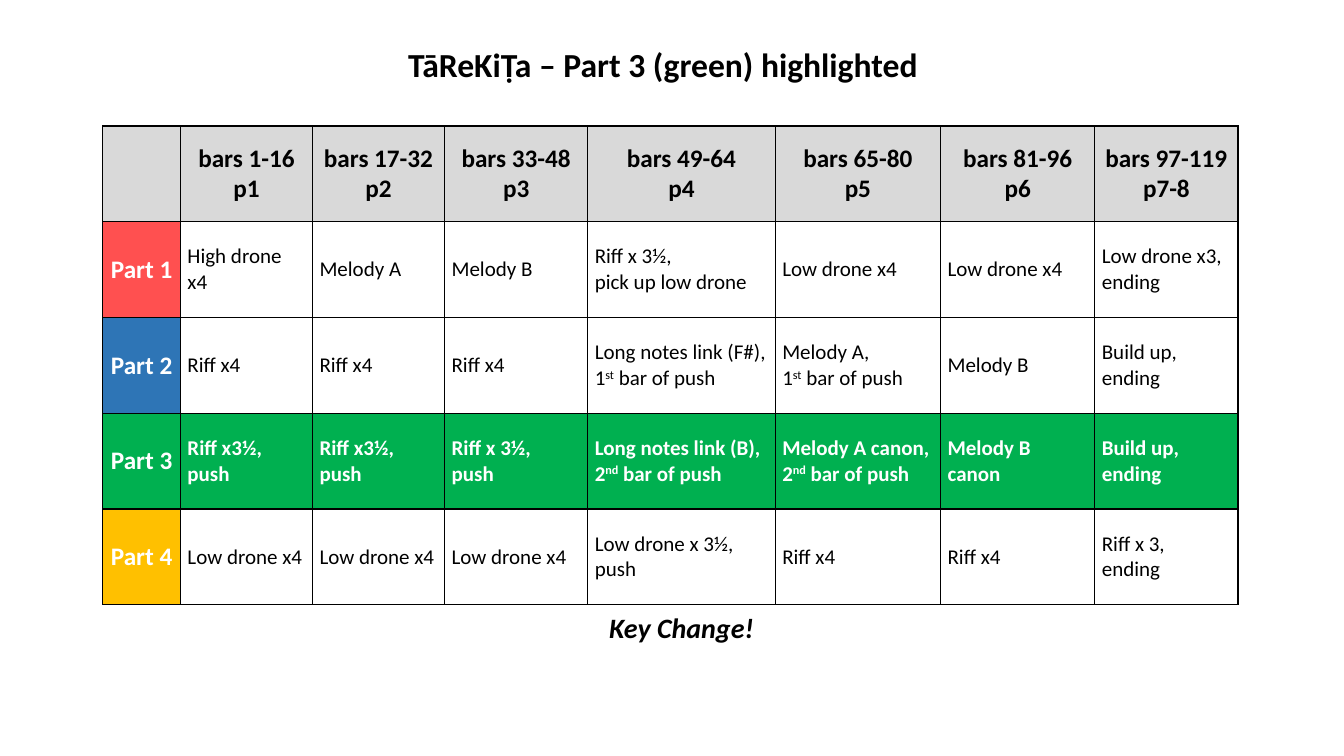
from pptx import Presentation
from pptx.dml.color import RGBColor
from pptx.enum.text import MSO_ANCHOR, PP_ALIGN
from pptx.oxml import parse_xml
from pptx.oxml.ns import nsdecls, qn
from pptx.util import Inches, Pt

CENTER, LEFT = PP_ALIGN.CENTER, PP_ALIGN.LEFT
MIDDLE = MSO_ANCHOR.MIDDLE

BLACK = RGBColor(0x00, 0x00, 0x00)
WHITE = RGBColor(0xFF, 0xFF, 0xFF)
GREY = RGBColor(0xD9, 0xD9, 0xD9)
RED = RGBColor(0xFF, 0x50, 0x50)
BLUE = RGBColor(0x2E, 0x75, 0xB6)
GREEN = RGBColor(0x00, 0xB0, 0x50)
AMBER = RGBColor(0xFF, 0xC0, 0x00)

FONT = "Calibri"
PLAIN_STYLE = "{2D5ABB26-0587-4C30-8999-92F81FD0307C}"

# "\n" starts a new paragraph; text between carets is superscript.
TITLE = "TāReKiṬa – Part 3 (green) highlighted"
HEADER = ["", "bars 1-16\np1", "bars 17-32\np2", "bars 33-48\np3", "bars 49-64\np4",
          "bars 65-80\np5", "bars 81-96\np6", "bars 97-119\np7-8"]
PARTS = [
    ["Part 1", "High drone x4", "Melody A", "Melody B", "Riff x 3½,\npick up low drone",
     "Low drone x4", "Low drone x4", "Low drone x3, ending"],
    ["Part 2", "Riff x4", "Riff x4", "Riff x4", "Long notes link (F#), 1^st^ bar of push",
     "Melody A,\n1^st^ bar of push", "Melody B", "Build up, ending"],
    ["Part 3", "Riff x3½, push", "Riff x3½, push", "Riff x 3½,\npush",
     "Long notes link (B), 2^nd^ bar of push", "Melody A canon, 2^nd^ bar of push",
     "Melody B canon", "Build up, ending"],
    ["Part 4", "Low drone x4", "Low drone x4", "Low drone x4", "Low drone x 3½, push",
     "Riff x4", "Riff x4", "Riff x 3,\nending"],
]
PART_COLORS = [RED, BLUE, GREEN, AMBER]
HIGHLIGHTED = 2
FOOTNOTE, FOOTNOTE_COL = "Key Change!", 4

COL_WIDTHS = [0.77, 1.31, 1.31, 1.42, 1.86, 1.64, 1.53, 1.42]
ROW_HEIGHT, FOOT_HEIGHT = 0.95, 0.48


def write(tf, text, size, color=BLACK, bold=False, italic=False, align=LEFT):
    for i, line in enumerate(text.split("\n")):
        p = tf.paragraphs[0] if i == 0 else tf.add_paragraph()
        p.alignment = align
        font = p.font
        font.name, font.size, font.bold, font.italic = FONT, Pt(size), bold, italic
        font.color.rgb = color
        for j, piece in enumerate(line.split("^")):
            r = p.add_run()
            r.text = piece
            if j % 2:
                r.font._element.set("baseline", "30000")


def add_borders(cell):
    tc_pr = cell._tc.get_or_add_tcPr()
    for side in ("lnL", "lnR", "lnT", "lnB"):
        tc_pr.append(parse_xml(
            f'<a:{side} {nsdecls("a")} w="{Pt(1)}"><a:solidFill>'
            f'<a:srgbClr val="{BLACK}"/></a:solidFill></a:{side}>'))


def fill_cell(cell, text, size, fill=None, **style):
    cell.margin_left = cell.margin_right = Inches(0.07)
    cell.margin_top = cell.margin_bottom = 0
    cell.vertical_anchor = MIDDLE
    if fill is not None:
        cell.fill.solid()
        cell.fill.fore_color.rgb = fill
    if text:
        write(cell.text_frame, text, size, **style)


prs = Presentation()
prs.slide_width, prs.slide_height = Inches(13.33), Inches(7.5)
s = prs.slides.add_slide(prs.slide_layouts[6])

n_rows, n_cols = len(PARTS) + 2, len(COL_WIDTHS)
foot = n_rows - 1
row_heights = [ROW_HEIGHT] * foot + [FOOT_HEIGHT]
table = s.shapes.add_table(n_rows, n_cols, Inches(1.02), Inches(1.25),
                           Inches(sum(COL_WIDTHS)), Inches(sum(row_heights))).table
table.first_row = table.horz_banding = False
table._tbl.tblPr.find(qn("a:tableStyleId")).text = PLAIN_STYLE
for col, width in zip(table.columns, COL_WIDTHS):
    col.width = Inches(width)
for row, height in zip(table.rows, row_heights):
    row.height = Inches(height)

for r in range(foot):
    for c in range(n_cols):
        add_borders(table.cell(r, c))

for c, text in enumerate(HEADER):
    fill_cell(table.cell(0, c), text, 18, GREY, bold=True, align=CENTER)

for i, (texts, color) in enumerate(zip(PARTS, PART_COLORS)):
    lit = i == HIGHLIGHTED
    fill_cell(table.cell(i + 1, 0), texts[0], 18, color, color=WHITE, bold=True, align=CENTER)
    for c, text in enumerate(texts[1:], 1):
        fill_cell(table.cell(i + 1, c), text, 15, color if lit else None,
                  color=WHITE if lit else BLACK, bold=lit)

for c in range(n_cols):
    fill_cell(table.cell(foot, c), FOOTNOTE if c == FOOTNOTE_COL else "", 20,
              bold=True, italic=True, align=CENTER)

title = s.shapes.add_textbox(Inches(3.95), Inches(0.39), Inches(5.42), Inches(0.5))
title.text_frame.word_wrap = True
write(title.text_frame, TITLE, 24, bold=True)

prs.save("out.pptx")
